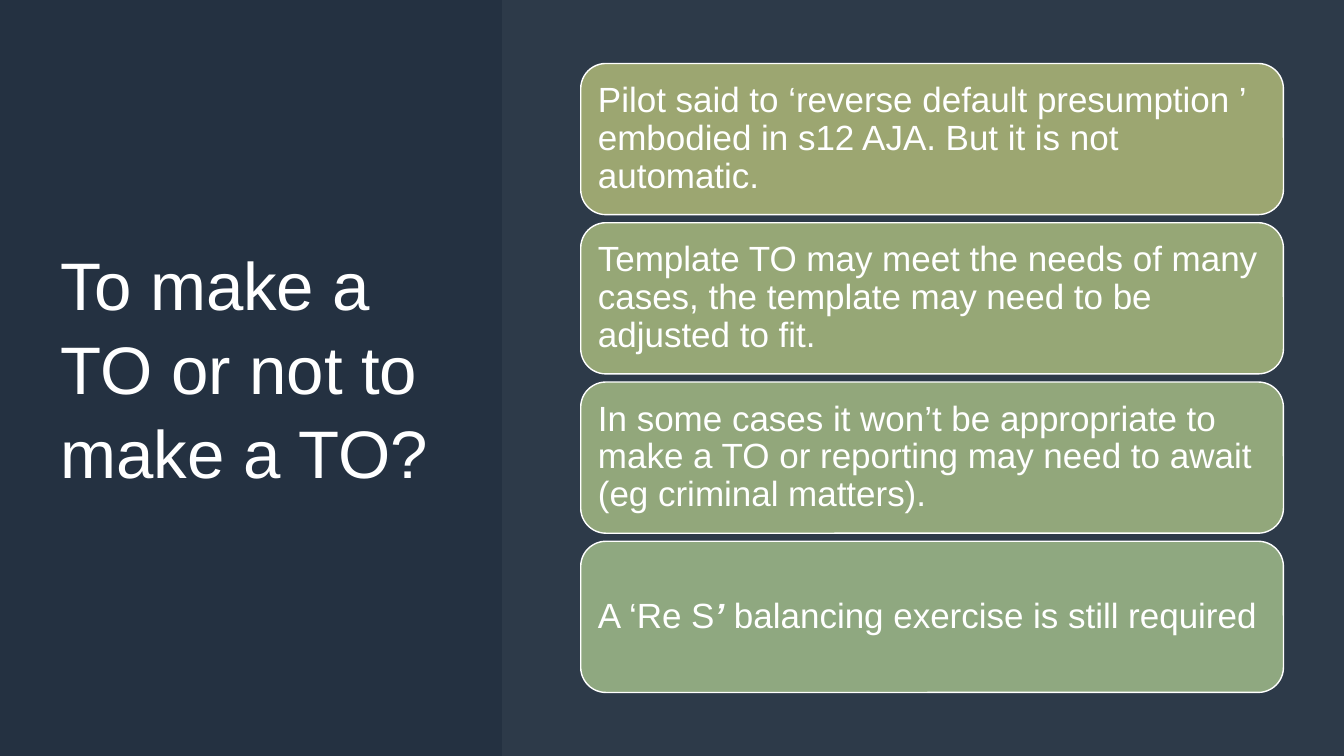
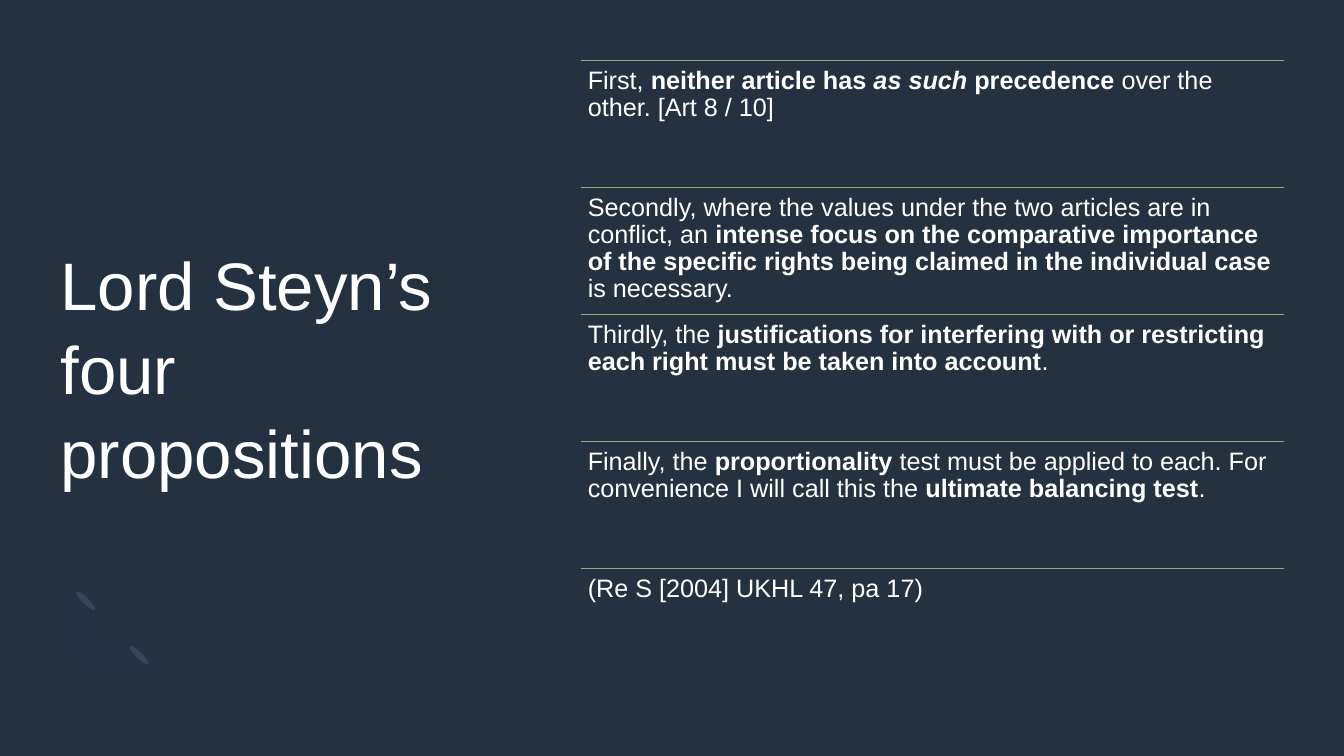
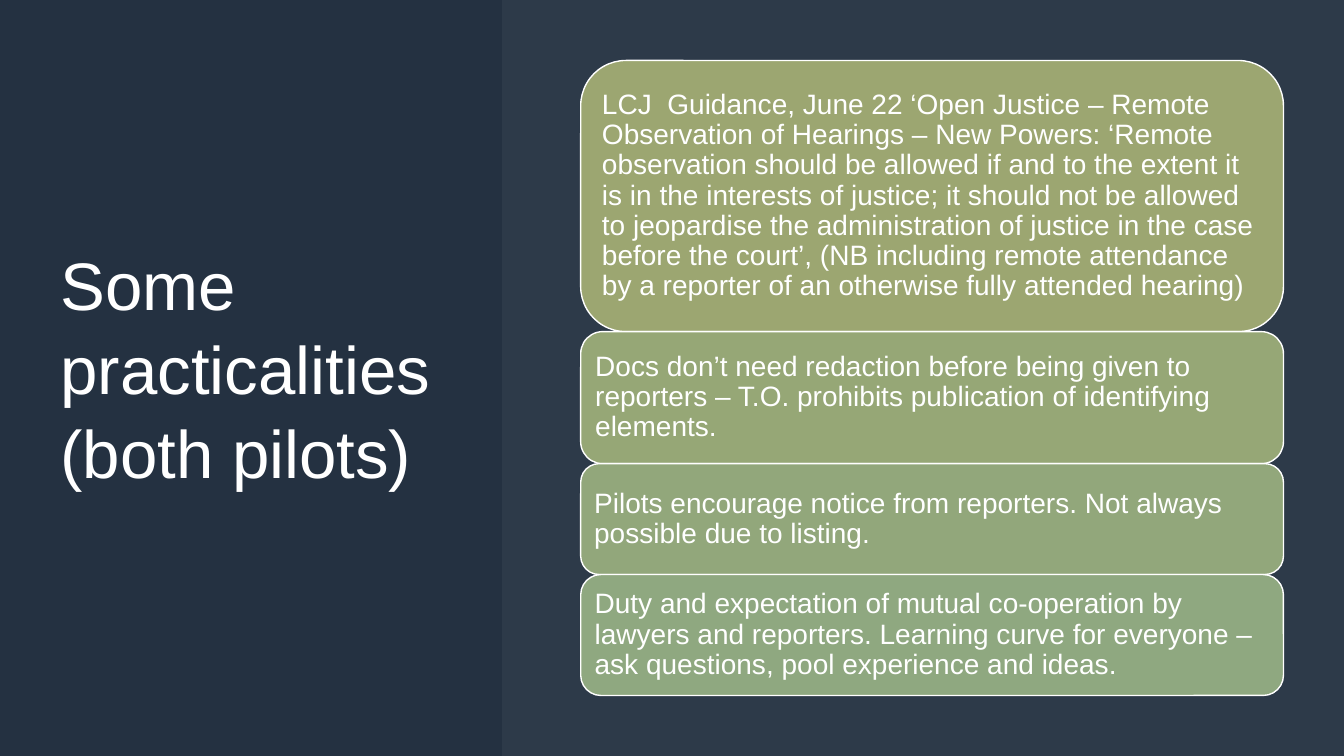
import math

from lxml import etree
from pptx import Presentation
from pptx.dml.color import RGBColor
from pptx.enum import shapes, text
from pptx.oxml.ns import qn
from pptx.util import Inches, Pt

# Shared style
FONT = "Arial"
WHITE, NAVY, PANEL = "FFFFFF", "243141", "E5EAF0"
CARD_COLORS = ["9CA671", "96A776", "92A77B", "8FA880"]
RULE_COLORS = ["9CA671", "98A675", "94A779", "91A77C", "8FA880"]
CONTENT_LEFT, CONTENT_WIDTH = 5.76, 6.97


def paint(fill, color, alpha=100):
    """Solid fill from a hex string, with opacity in percent."""
    fill.solid()
    fill.fore_color.rgb = RGBColor.from_string(color)
    if alpha < 100:
        tint = fill._xPr.find(qn("a:solidFill"))[0]
        etree.SubElement(tint, qn("a:alpha")).set("val", str(alpha * 1000))


def write(shape, spans, size, inset, anchor, spacing):
    """One white paragraph; spans are (text, style) with b and i as styles."""
    frame = shape.text_frame
    frame.word_wrap = True
    frame.vertical_anchor = anchor
    frame.margin_left = frame.margin_right = Inches(inset)
    frame.margin_top = frame.margin_bottom = Inches(inset)
    para = frame.paragraphs[0]
    para.alignment = text.PP_ALIGN.LEFT
    para.line_spacing = spacing
    para.font.name, para.font.size = FONT, Pt(size)
    para.font.color.rgb = RGBColor.from_string(WHITE)
    for words, style in spans:
        span = para.add_run()
        span.text = words
        if style:
            span.font.bold = "b" in style
            span.font.italic = "i" in style


# Content
pilot_cards = [
    (1.5, [("Pilot said to ‘reverse default presumption ’ embodied in s12 AJA. "
            "But it is not automatic.", "")]),
    (1.5, [("Template TO may meet the needs of many cases, the template may "
            "need to be adjusted to fit.", "")]),
    (1.5, [("In some cases it won’t be appropriate to make a TO or reporting "
            "may need to await (eg criminal matters).", "")]),
    (1.5, [("A ‘Re S", ""), ("’", "bi"),
           (" balancing exercise is still required", "")]),
]
propositions = [
    [("First, ", ""), ("neither article has ", "b"), ("as such", "bi"),
     (" precedence ", "b"), ("over the other. [Art 8 / 10]", "")],
    [("Secondly, where the values under the two articles are in conflict, an ", ""),
     ("intense focus on the comparative importance of the specific rights "
      "being claimed in the individual case", "b"), (" is necessary.", "")],
    [("Thirdly, the ", ""),
     ("justifications for interfering with or restricting each right must be "
      "taken into account", "b"), (".", "")],
    [("Finally, the ", ""), ("proportionality", "b"),
     (" test must be applied to each. For convenience I will call this the ", ""),
     ("ultimate balancing test", "b"), (".", "")],
    [("(Re S [2004] UKHL 47, pa 17)", "")],
]
practical_cards = [
    (2.69, [("LCJ  Guidance, June 22 ‘Open Justice – Remote Observation of "
             "Hearings – New Powers: ‘Remote observation should be allowed if "
             "and to the extent it is in the interests of justice; it should "
             "not be allowed to jeopardise the administration of justice in "
             "the case before the court’, (NB including remote attendance by a "
             "reporter of an otherwise fully attended hearing)", "")]),
    (1.31, [("Docs don’t need redaction before being given to reporters – T.O. "
             "prohibits publication of identifying elements.", "")]),
    (1.1, [("Pilots encourage notice from reporters. Not always possible due "
            "to listing.", "")]),
    (1.2, [("Duty and expectation of mutual co-operation by lawyers and "
            "reporters. Learning curve for everyone – ask questions, pool "
            "experience and ideas.", "")]),
]

deck = Presentation()
deck.slide_width, deck.slide_height = Inches(13.33), Inches(7.5)

# Backgrounds and titles
pages = []
for title in ("To make a TO or not to make a TO?",
              "Lord Steyn’s four propositions",
              "Some practicalities (both pilots)"):
    page = deck.slides.add_slide(deck.slide_layouts[6])
    paint(page.background.fill, NAVY)
    box = page.shapes.add_textbox(Inches(0.6), Inches(0.6), Inches(3.9), Inches(6.06))
    write(box, [(title, "")], 48, 0, text.MSO_ANCHOR.MIDDLE, 1.04)
    pages.append(page)
pilot_page, steyn_page, practical_page = pages

# Card slides: light panel with a stack of rounded cards
for page, cards, top, gap, size, inset in (
        (pilot_page, pilot_cards, 0.63, 0.08, 25, 0.1),
        (practical_page, practical_cards, 0.6, 0, 20, 0.08)):
    panel = page.shapes.add_shape(shapes.MSO_SHAPE.RECTANGLE, Inches(4.98), 0,
                                  Inches(8.35), deck.slide_height)
    panel.shadow.inherit = False
    paint(panel.fill, PANEL, 5)
    panel.line.fill.background()
    for (height, spans), color in zip(cards, CARD_COLORS):
        card = page.shapes.add_shape(
            shapes.MSO_SHAPE.ROUNDED_RECTANGLE, Inches(CONTENT_LEFT), Inches(top),
            Inches(CONTENT_WIDTH), Inches(height))
        card.shadow.inherit = False
        paint(card.fill, color)
        paint(card.line.fill, WHITE)
        card.line.width = Pt(1)
        write(card, spans, size, inset, text.MSO_ANCHOR.MIDDLE, 0.9)
        top += height + gap

# Propositions: a rule above each text
ROW = 1.26
for index, (spans, color) in enumerate(zip(propositions, RULE_COLORS)):
    top = Inches(0.6 + index * ROW)
    rule = steyn_page.shapes.add_connector(
        shapes.MSO_CONNECTOR.STRAIGHT, Inches(CONTENT_LEFT), top,
        Inches(CONTENT_LEFT + CONTENT_WIDTH), top)
    paint(rule.line.fill, color)
    rule.line.width = Pt(1)
    etree.SubElement(rule._element.spPr, qn("a:effectLst"))
    box = steyn_page.shapes.add_textbox(Inches(CONTENT_LEFT), top,
                                        Inches(CONTENT_WIDTH), Inches(ROW))
    write(box, spans, 18, 0.07, text.MSO_ANCHOR.TOP, 0.9)

# Corner ornament: two slanted ellipses and a faint half ring
for left, top in ((1.35, 6.37), (0.82, 5.83)):
    tip = steyn_page.shapes.add_shape(shapes.MSO_SHAPE.OVAL, Inches(left),
                                      Inches(top), Inches(0.06), Inches(0.26))
    tip.rotation = 135
    tip.shadow.inherit = False
    paint(tip.fill, "33455B")
    tip.line.fill.background()

STEPS = 24
outline = []
for along, across, order in ((0.5, 0.57, range(STEPS + 1)),
                             (0.25, 0.29, range(STEPS, -1, -1))):
    for step in order:
        angle = math.pi * step / STEPS
        u, v = along * math.cos(angle), across * math.sin(angle)
        outline.append((Inches(1.17 + (u - v) * math.sqrt(0.5)),
                        Inches(6.18 + (u + v) * math.sqrt(0.5))))
builder = steyn_page.shapes.build_freeform(*outline[0])
builder.add_line_segments(outline[1:], close=True)
ring = builder.convert_to_shape()
ring.shadow.inherit = False
paint(ring.fill, "7B96B6", 2)
ring.line.fill.background()

deck.save("out.pptx")
